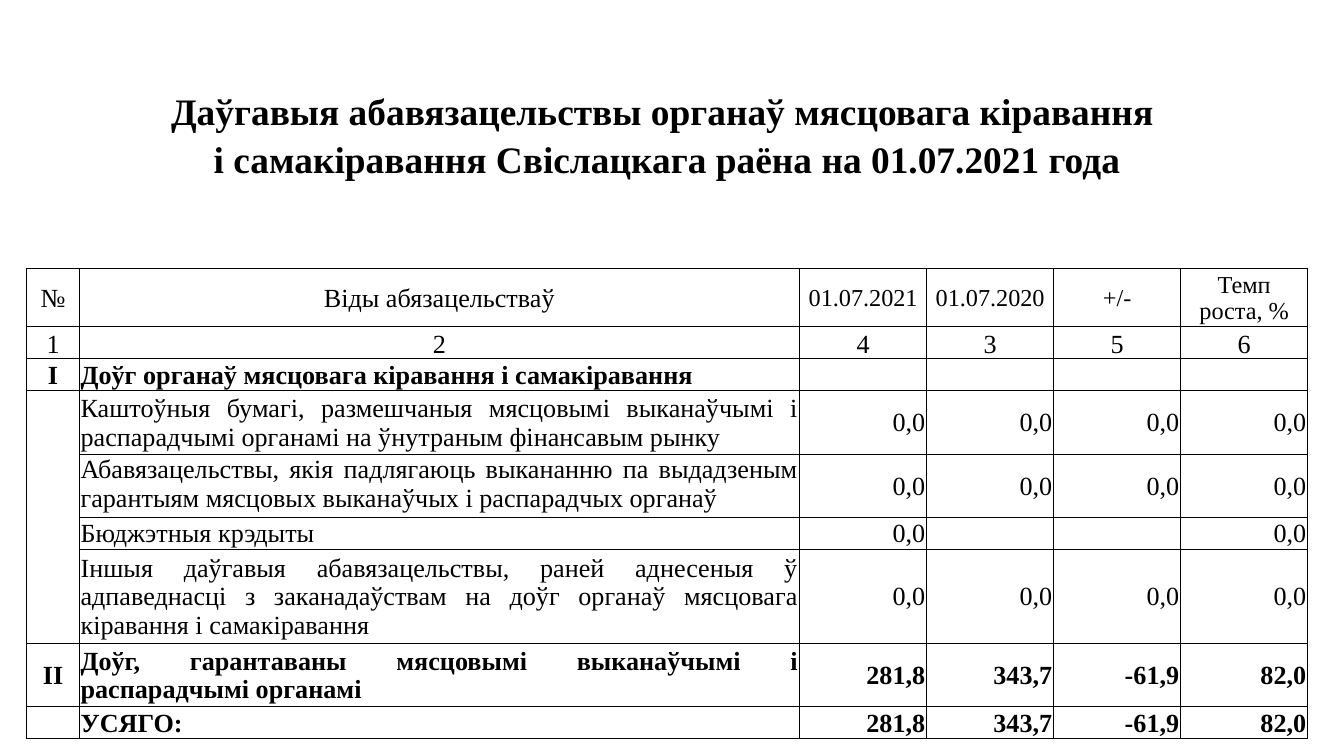
from lxml.etree import SubElement
from pptx import Presentation
from pptx.dml.color import RGBColor
from pptx.enum.text import MSO_ANCHOR, PP_ALIGN
from pptx.oxml.ns import qn
from pptx.util import Inches, Pt

FONT = "Times New Roman"
BLACK, WHITE = "000000", "FFFFFF"
TITLE = [
    "Даўгавыя абавязацельствы органаў мясцовага кіравання ",
    "і самакіравання Свіслацкага раёна на 01.07.2021 года",
]
HEADER = ["№", "Віды абязацельстваў", "01.07.2021", "01.07.2020", "+/-", "Темп\nроста, %"]
NUMBERS = ["1", "2", "4", "3", "5", "6"]
ZEROS = ["0,0"] * 4
TOTALS = ["281,8", "343,7", "-61,9", "82,0"]
DEBTS = [
    ["I", "Доўг органаў мясцовага кіравання і самакіравання", "", "", "", ""],
    ["", "Каштоўныя бумагі, размешчаныя мясцовымі выканаўчымі і "
         "распарадчымі органамі на ўнутраным фінансавым рынку", *ZEROS],
    ["", "Абавязацельствы, якія падлягаюць выкананню па выдадзеным "
         "гарантыям мясцовых выканаўчых і распарадчых органаў", *ZEROS],
    ["", "Бюджэтныя крэдыты", "0,0", "", "", "0,0"],
    ["", "Іншыя даўгавыя абавязацельствы, раней аднесеныя ў адпаведнасці "
         "з заканадаўствам на доўг органаў мясцовага кіравання і самакіравання", *ZEROS],
    ["II", "Доўг, гарантаваны мясцовымі выканаўчымі і распарадчымі органамі", *TOTALS],
    ["", "УСЯГО:", *TOTALS],
]
NUMBER_WIDTH, NAME_WIDTH = 0.39, 5.36
COLUMN_COUNT = len(HEADER)
ROW_HEIGHTS = [0.38, 0.76, 0.38, 0.27, 0.43, 0.24, 0.24, 0.47, 0.47, 0.24, 0.7, 0.47, 0.24]
TITLE_ROW, HEADER_ROW, NUMBER_ROW, FIRST_DEBT_ROW = 1, 4, 5, 6
GROUP_ROWS = range(7, 11)
TOP_ALIGNED_ROW = 8
BOLD_ROWS = (6, 11, 12)


def color(value):
    return RGBColor.from_string(value)


def set_borders(cell, sides):
    properties = cell._tc.get_or_add_tcPr()
    for side in "LRTB":
        line = SubElement(properties, qn(f"a:ln{side}"), w=str(Pt(0.5)))
        if side in sides:
            fill = SubElement(line, qn("a:solidFill"))
            SubElement(fill, qn("a:srgbClr"), val=BLACK)
        else:
            SubElement(line, qn("a:noFill"))


def set_text(cell, text, size=14, bold=False, alignment=PP_ALIGN.CENTER,
             anchor=MSO_ANCHOR.MIDDLE, spacing=None):
    cell.margin_left = cell.margin_right = cell.margin_top = Inches(0.01)
    cell.margin_bottom = 0
    cell.vertical_anchor = anchor
    cell.text_frame.text = text
    for paragraph in cell.text_frame.paragraphs:
        paragraph.alignment = alignment
        paragraph.line_spacing = spacing
        for run in paragraph.runs:
            run.font.name = FONT
            run.font.size = Pt(size)
            run.font.bold = bold
            run.font.color.rgb = color(BLACK)
        if not paragraph.runs:
            end = SubElement(paragraph._p, qn("a:endParaRPr"), sz=str(size * 100))
            SubElement(end, qn("a:latin"), typeface=FONT)


def cell_sides(row, column):
    if row < HEADER_ROW:
        return "B" if row == HEADER_ROW - 1 else ""
    if column == 0 and row in GROUP_ROWS:
        top = "T" if row == GROUP_ROWS[0] else ""
        bottom = "B" if row == GROUP_ROWS[-1] else ""
        return "LR" + top + bottom
    return "LRTB"


def style_grid(table):
    for row in range(len(ROW_HEIGHTS)):
        for column in range(COLUMN_COUNT):
            cell = table.cell(row, column)
            set_borders(cell, cell_sides(row, column))
            if row == TITLE_ROW + 1 or (row >= FIRST_DEBT_ROW and column > 1):
                cell.fill.solid()
                cell.fill.fore_color.rgb = color(WHITE)
            else:
                cell.fill.background()


def fill_title(table):
    for row in range(HEADER_ROW):
        cell = table.cell(row, 0)
        cell.merge(table.cell(row, COLUMN_COUNT - 1))
        if row == TITLE_ROW:
            set_text(cell, "\n".join(TITLE), 20, True, anchor=MSO_ANCHOR.BOTTOM, spacing=1.15)
        else:
            set_text(cell, "")


def fill_header(table):
    for column, (heading, number) in enumerate(zip(HEADER, NUMBERS)):
        set_text(table.cell(HEADER_ROW, column), heading, 14 if column < 2 else 13)
        set_text(table.cell(NUMBER_ROW, column), number, anchor=MSO_ANCHOR.BOTTOM)


def fill_debts(table):
    alignments = [PP_ALIGN.CENTER, PP_ALIGN.JUSTIFY] + [PP_ALIGN.RIGHT] * 4
    for row, values in enumerate(DEBTS, FIRST_DEBT_ROW):
        for column, (text, alignment) in enumerate(zip(values, alignments)):
            at_top = row == TOP_ALIGNED_ROW and column == 1
            anchor = MSO_ANCHOR.TOP if at_top else MSO_ANCHOR.MIDDLE
            set_text(table.cell(row, column), text, bold=row in BOLD_ROWS,
                     alignment=alignment, anchor=anchor)


def add_debt_table(slide, left, top, width, height):
    frame = slide.shapes.add_table(
        len(ROW_HEIGHTS), COLUMN_COUNT,
        Inches(left), Inches(top), Inches(width), Inches(height))
    table = frame.table
    table.first_row = table.horz_banding = False
    value_width = (width - NUMBER_WIDTH - NAME_WIDTH) / 4
    column_widths = [NUMBER_WIDTH, NAME_WIDTH] + [value_width] * 4
    for column, column_width in zip(table.columns, column_widths):
        column.width = Inches(column_width)
    for row, row_height in zip(table.rows, ROW_HEIGHTS):
        row.height = Inches(row_height)
    frame.height = Inches(height)
    style_grid(table)
    fill_title(table)
    fill_header(table)
    fill_debts(table)


def main():
    presentation = Presentation()
    presentation.slide_width = Inches(10)
    presentation.slide_height = presentation.slide_width * 9 // 16
    slide = presentation.slides.add_slide(presentation.slide_layouts[6])
    add_debt_table(slide, 0.2, 0.21, 9.53, 5.33)
    presentation.save("out.pptx")


if __name__ == "__main__":
    main()
